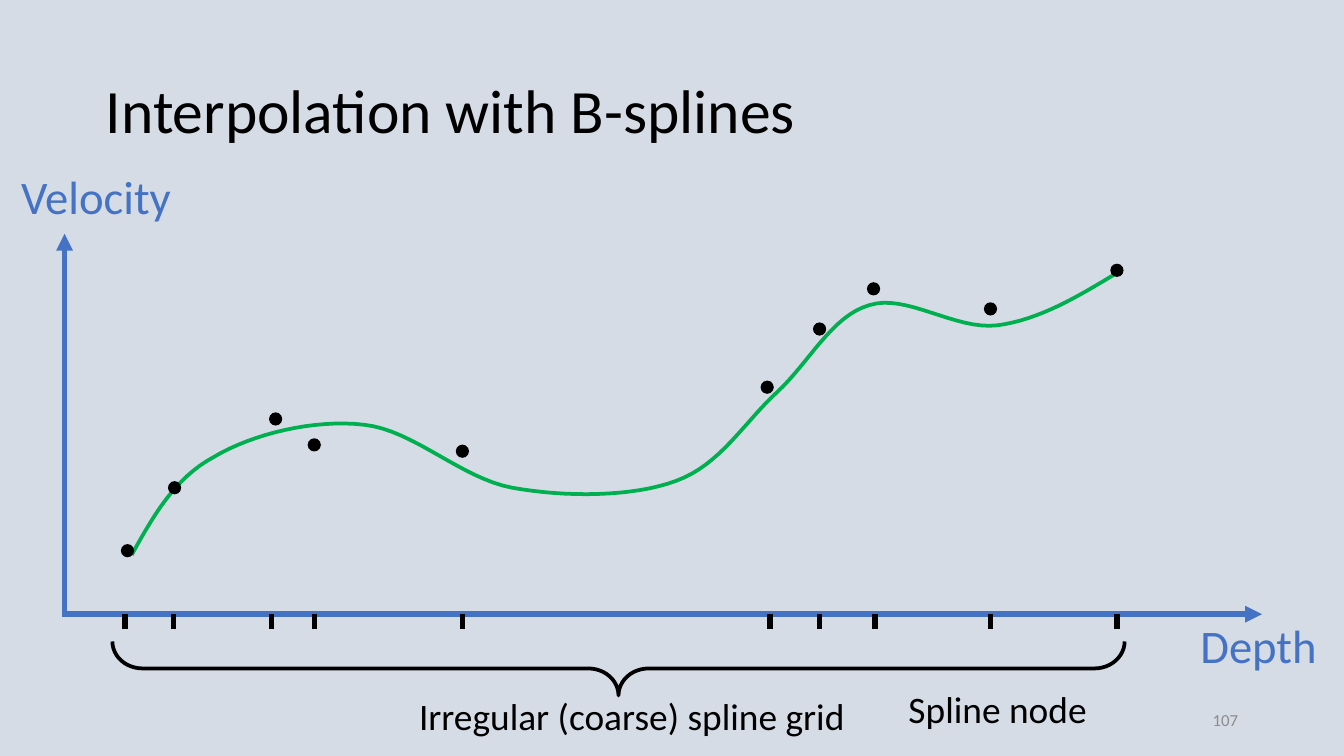
"""Build the slide on interpolation with B-splines."""
from pptx import Presentation
from pptx.dml.color import RGBColor
from pptx.enum.shapes import MSO_CONNECTOR, MSO_SHAPE
from pptx.enum.text import MSO_ANCHOR, MSO_AUTO_SIZE, PP_ALIGN
from pptx.oxml.ns import qn
from pptx.util import Cm, Pt
from lxml import etree

STRAIGHT = MSO_CONNECTOR.STRAIGHT
OVAL, BRACE = MSO_SHAPE.OVAL, MSO_SHAPE.LEFT_BRACE
TOP, MIDDLE = MSO_ANCHOR.TOP, MSO_ANCHOR.MIDDLE
LEFT, CENTER, RIGHT = PP_ALIGN.LEFT, PP_ALIGN.CENTER, PP_ALIGN.RIGHT
COLORS = {
    name: RGBColor.from_string(value)
    for name, value in {
        "background": "D6DCE5",
        "ink": "000000",
        "axis": "4472C4",
        "curve": "00B050",
        "number": "8C8C8C",
    }.items()
}

deck = Presentation()
deck.slide_width, deck.slide_height = Cm(25.4), Cm(14.29)
page = deck.slides.add_slide(deck.slide_layouts[6])
page.background.fill.solid()
page.background.fill.fore_color.rgb = COLORS["background"]


def add_text(text, left, top, width, height, size, color="ink", align=LEFT,
             anchor=TOP, wrap=True, grow=False, spacing=None):
    box = page.shapes.add_textbox(Cm(left), Cm(top), Cm(width), Cm(height))
    frame = box.text_frame
    frame.word_wrap = wrap
    frame.vertical_anchor = anchor
    frame.auto_size = MSO_AUTO_SIZE.SHAPE_TO_FIT_TEXT if grow else MSO_AUTO_SIZE.NONE
    para = frame.paragraphs[0]
    para.alignment = align
    para.line_spacing = spacing
    span = para.add_run()
    span.text = text
    span.font.name = "Calibri"
    span.font.size = Pt(size)
    span.font.color.rgb = COLORS[color]


def add_line(start, end, color="ink", arrow=False):
    line = page.shapes.add_connector(STRAIGHT, *(Cm(value) for value in start + end))
    line.line.color.rgb = COLORS[color]
    line.line.width = Pt(3)
    properties = line._element.spPr
    if arrow:
        etree.SubElement(properties.find(qn("a:ln")), qn("a:tailEnd"), type="triangle")
    etree.SubElement(properties, qn("a:effectLst"))


curve_start = (2.49, 10.49)
curve_segments = [
    [(2.9, 9.75), (3.3, 9.04), (4.04, 8.64)],
    [(4.78, 8.2), (5.94, 7.92), (6.88, 8.03)],
    [(7.82, 8.13), (8.71, 9.04), (9.68, 9.22)],
    [(10.67, 9.4), (11.96, 9.4), (12.78, 9.09)],
    [(13.61, 8.79), (14.07, 7.98), (14.68, 7.42)],
    [(15.29, 6.86), (15.72, 5.97), (16.43, 5.77)],
    [(17.12, 5.54), (18.06, 6.25), (18.85, 6.15)],
    [(19.63, 6.05), (20.37, 5.61), (21.11, 5.16)],
]
steps = 16
curve_points = []
segment_start = curve_start
for segment in curve_segments:
    controls = [segment_start, *segment]
    for step in range(1, steps + 1):
        t = step / steps
        weights = ((1 - t) ** 3, 3 * t * (1 - t) ** 2, 3 * t * t * (1 - t), t ** 3)
        curve_points.append(tuple(
            Cm(sum(weight * point[axis] for weight, point in zip(weights, controls)))
            for axis in range(2)
        ))
    segment_start = segment[-1]
builder = page.shapes.build_freeform(Cm(curve_start[0]), Cm(curve_start[1]))
builder.add_line_segments(curve_points, close=False)
curve = builder.convert_to_shape()
curve.shadow.inherit = False
curve.fill.background()
curve.line.color.rgb = COLORS["curve"]
curve.line.width = Pt(2)

add_text("Interpolation with B-splines", 1.75, 0.76, 21.89, 2.77, 33,
         anchor=MIDDLE, spacing=0.9)
add_text("107", 17.93, 13.23, 5.72, 0.76, 9, color="number", align=RIGHT, anchor=MIDDLE)

origin_x, axis_y = 1.22, 11.61
add_line((origin_x, 11.66), (origin_x, 4.42), color="axis", arrow=True)
add_line((origin_x, axis_y), (23.85, axis_y), color="axis", arrow=True)
for label, left, top in [("Velocity", -0.51, 3.05), ("Depth", 21.46, 11.53)]:
    add_text(label, left, top, 4.65, 1.32, 25, color="axis", align=CENTER, grow=True)

samples = [
    (2.41, 10.41), (3.3, 9.22), (5.21, 7.92), (5.94, 8.41), (8.74, 8.53),
    (14.5, 7.32), (15.49, 6.22), (16.51, 5.46), (18.72, 5.84), (21.11, 5.11),
]
diameter = 0.25
for x, y in samples:
    dot = page.shapes.add_shape(OVAL, Cm(x - diameter / 2), Cm(y - diameter / 2),
                                Cm(diameter), Cm(diameter))
    dot.shadow.inherit = False
    dot.fill.solid()
    dot.fill.fore_color.rgb = COLORS["ink"]
    dot.line.fill.background()

for x in [2.36, 3.28, 5.13, 5.94, 8.74, 14.55, 15.49, 16.54, 18.72, 21.11]:
    add_line((x, axis_y), (x, axis_y + 0.28))

brace = page.shapes.add_shape(BRACE, Cm(11.18), Cm(3.07), Cm(1.02), Cm(19.13))
brace.rotation = 270
brace.adjustments[0] = 0.56
brace.adjustments[1] = 0.5
brace.shadow.inherit = False
brace.fill.background()
brace.line.color.rgb = COLORS["ink"]
brace.line.width = Pt(2)

add_text("Irregular (coarse) spline grid", 7.67, 12.98, 8.64, 1.12, 20, wrap=False, grow=True)
add_text("Spline node", 16.92, 12.85, 3.91, 1.12, 20, wrap=False, grow=True)

deck.save("out.pptx")
